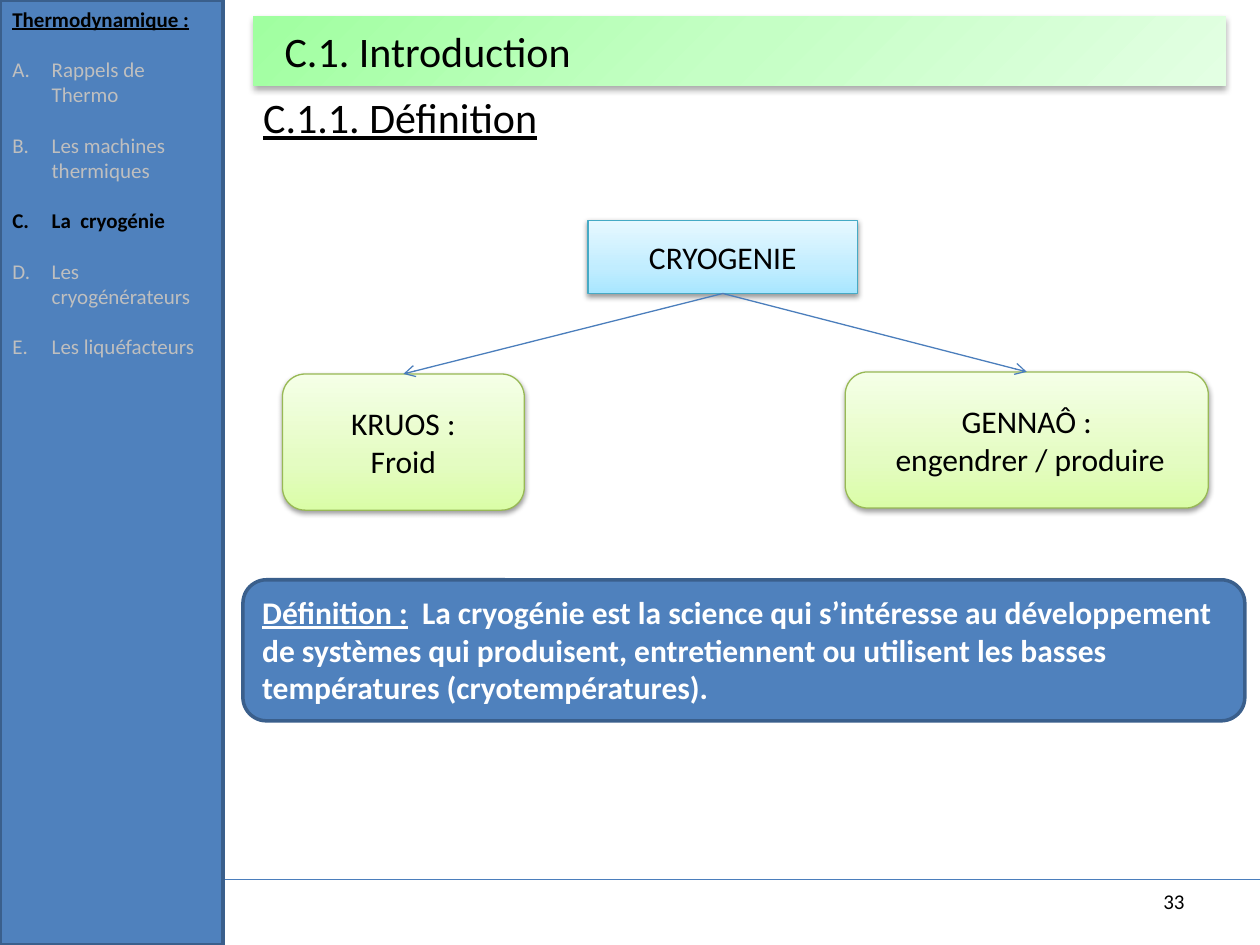
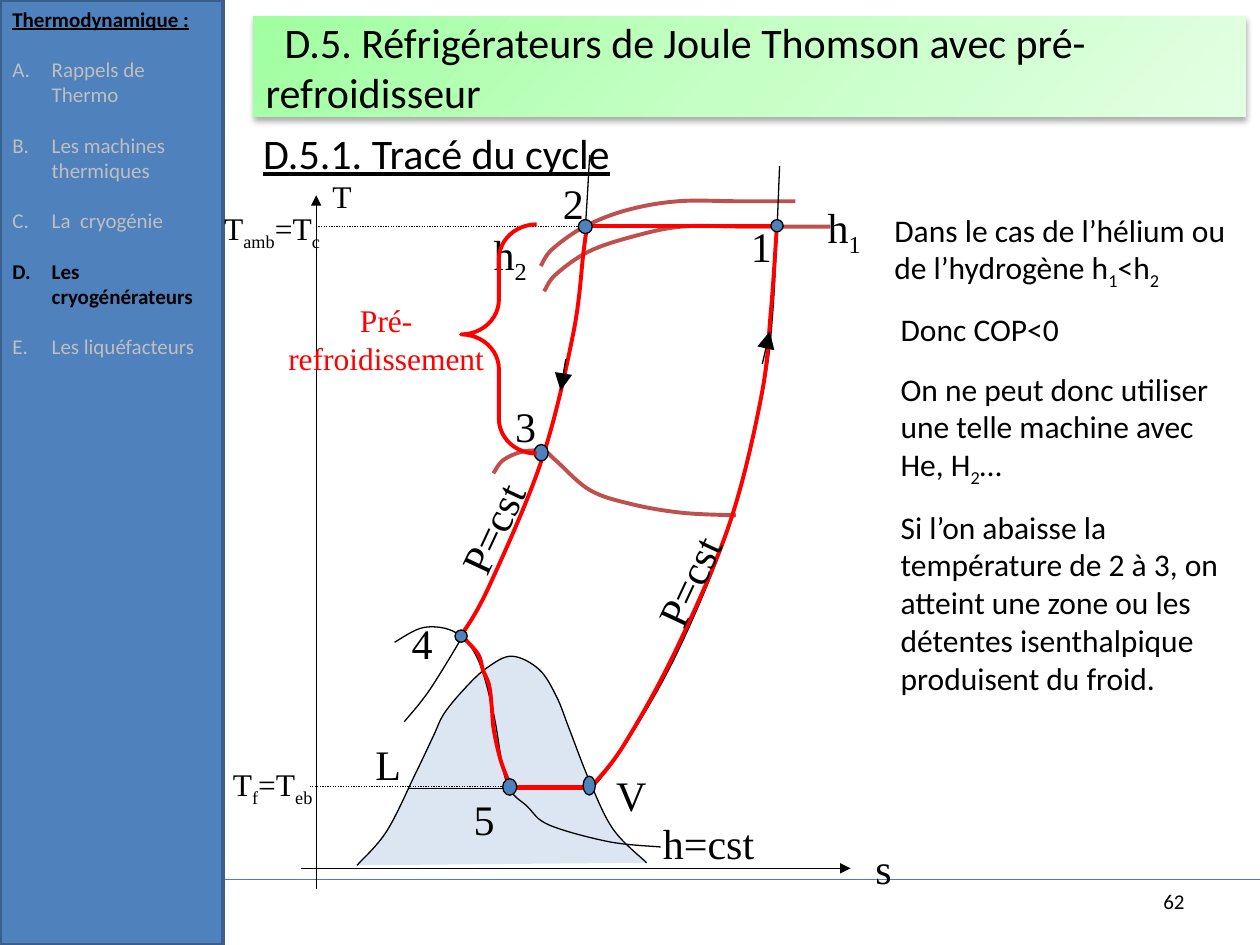
"""Build two thermodynamics course slides: cryogenics definition and a Joule Thomson cycle."""
from typing import Any, NamedTuple, Optional

import lxml.etree
import pptx
import pptx.dml.color
import pptx.enum.dml
import pptx.enum.shapes
import pptx.enum.text
import pptx.oxml.ns
import pptx.util

RGB = pptx.dml.color.RGBColor
BLACK = RGB(0x00, 0x00, 0x00)
WHITE = RGB(0xFF, 0xFF, 0xFF)
RED = RGB(0xFF, 0x00, 0x00)
BROWN = RGB(0xC0, 0x50, 0x4D)
BLUE = RGB(0x4F, 0x81, 0xBD)
EDGE = RGB(0x3A, 0x5F, 0x8C)
RULE = RGB(0x4B, 0x7E, 0xBC)
GREY = RGB(0xBF, 0xBF, 0xBF)
DOME = RGB(0xDC, 0xE6, 0xF2)
CYAN_EDGE = RGB(0x46, 0xAA, 0xC5)
LIME_EDGE = RGB(0x98, 0xB9, 0x55)
BAND_STOPS = {0: "A0FFA0", 50: "C5FFC5", 100: "E3FFE3"}
CYAN_STOPS = {0: "A7E6FF", 35: "C1EDFF", 100: "E7F8FF"}
LIME_STOPS = {0: "DAFDA7", 35: "E4FCC2", 100: "F5FFE7"}

SHAPE = pptx.enum.shapes.MSO_SHAPE
ALIGN = pptx.enum.text.PP_ALIGN
MIDDLE = pptx.enum.text.MSO_ANCHOR.MIDDLE
TOP = pptx.enum.text.MSO_ANCHOR.TOP
SERIF = "Times New Roman"
CHAPTERS = ["Rappels de Thermo", "Les machines thermiques", "La  cryogénie",
            "Les cryogénérateurs", "Les liquéfacteurs"]

Point = tuple[float, float]


class Box(NamedTuple):
    """Left, top, width and height in points."""
    x: float
    y: float
    w: float
    h: float


class Page(NamedTuple):
    """What changes in the frame shared by the slides."""
    title: str
    band: Box
    subtitle: str
    subtitle_top: float
    chapter: str
    number: str


class Label(NamedTuple):
    """A text box; odd parts between bars are subscripts."""
    text: str
    box: Box
    size: float = 24
    font: str = SERIF
    rotation: float = 0


class Segment(NamedTuple):
    """A straight line."""
    start: Point
    end: Point
    color: RGB = BLACK
    width: float = 0.75
    head: str = ""
    head_size: str = "med"
    dotted: bool = False


class Curve(NamedTuple):
    """A smooth outline through points."""
    points: list[Point]
    color: RGB = BLACK
    width: float = 0.75
    fill: Optional[RGB] = None


def pts(*values: float) -> list[int]:
    """Convert points to lengths."""
    return [pptx.util.Pt(v) for v in values]


def apply(target: Any, values: dict[str, Any]) -> None:
    """Set every attribute in values on target."""
    for name, value in values.items():
        setattr(target, name, value)


def sub(parent: Any, tag: str, **attrs: str) -> Any:
    """Append a DrawingML element."""
    e = lxml.etree.SubElement(parent, pptx.oxml.ns.qn(tag))
    for name, value in attrs.items():
        e.set(name, value)
    return e


def style(font: Any, color: RGB = BLACK, size: float = 18, name: str = "Calibri", **values: Any) -> None:
    """Format a font."""
    apply(font, {"size": pptx.util.Pt(size), "name": name, **values})
    font.color.rgb = color


def write(p: Any, text: str, **values: Any) -> None:
    """Add text whose odd parts between bars are subscripts."""
    for i, part in enumerate(text.split("|")):
        if part:
            r = p.add_run()
            r.text = part
            style(r.font, **values)
            if i % 2:
                r.font._element.set("baseline", "-25000")


def indent(p: Any, left: float, first: float) -> Any:
    """Indent a paragraph and return its properties."""
    ppr = p._p.get_or_add_pPr()
    ppr.set("marL", str(pptx.util.Pt(left)))
    ppr.set("indent", str(pptx.util.Pt(first)))
    return ppr


def add_text(s: Any, text: str, box: Box, anchor: Any = TOP, align: Any = ALIGN.LEFT, **values: Any) -> Any:
    """Add a text box and return it."""
    sp = s.shapes.add_textbox(*pts(*box))
    apply(sp.text_frame, {"word_wrap": True, "vertical_anchor": anchor})
    p = sp.text_frame.paragraphs[0]
    p.alignment = align
    for i, line in enumerate(text.split("\n")):
        if i:
            p.add_line_break()
        write(p, line, **values)
    return sp


def outline(sp: Any, color: Optional[RGB], width: float) -> None:
    """Set the line of a shape and drop its shadow."""
    sp.shadow.inherit = False
    if color is None:
        sp.line.fill.background()
    else:
        sp.line.color.rgb = color
        sp.line.width = pptx.util.Pt(width)


def add_solid(s: Any, kind: Any, box: Box, fill: RGB, edge: RGB, width: float) -> Any:
    """Add a flat preset shape."""
    sp = s.shapes.add_shape(kind, *pts(*box))
    sp.fill.solid()
    sp.fill.fore_color.rgb = fill
    outline(sp, edge, width)
    return sp


def add_gradient(s: Any, kind: Any, box: Box, stops: dict[int, str], angle: float,
                 edge: Optional[RGB], shadow: tuple[float, float, int]) -> Any:
    """Add a gradient shape with a soft shadow below."""
    sp = s.shapes.add_shape(kind, *pts(*box))
    sp.fill.gradient()
    sp.fill.gradient_angle = angle
    spr = sp._element.spPr
    gs_list = spr.find(".//" + pptx.oxml.ns.qn("a:gsLst"))
    for gs in list(gs_list):
        gs_list.remove(gs)
    for pos, color in stops.items():
        sub(sub(gs_list, "a:gs", pos=str(pos * 1000)), "a:srgbClr", val=color)
    outline(sp, edge, 0.75)
    blur, dist, alpha = shadow
    e = sub(spr.find(pptx.oxml.ns.qn("a:effectLst")), "a:outerShdw", blurRad=str(pptx.util.Pt(blur)),
            dist=str(pptx.util.Pt(dist)), dir="5400000", rotWithShape="0")
    sub(sub(e, "a:srgbClr", val="000000"), "a:alpha", val=str(alpha * 1000))
    sp.text_frame.vertical_anchor = MIDDLE
    return sp


def add_segment(s: Any, seg: Segment) -> Any:
    """Draw a straight line and return it."""
    c = s.shapes.add_connector(pptx.enum.shapes.MSO_CONNECTOR.STRAIGHT, *pts(*seg.start, *seg.end))
    c.line.color.rgb = seg.color
    c.line.width = pptx.util.Pt(seg.width)
    if seg.dotted:
        c.line.dash_style = pptx.enum.dml.MSO_LINE.ROUND_DOT
    if seg.head:
        sub(c.line._get_or_add_ln(), "a:tailEnd", type=seg.head, w=seg.head_size, len=seg.head_size)
    sub(c._element.spPr, "a:effectLst")
    return c


def round_corners(sp: Any) -> None:
    """Turn the straight pieces of a freeform into Catmull-Rom cubic curves."""
    pieces = sp._element.spPr.find(".//" + pptx.oxml.ns.qn("a:path"))
    knots = [(int(e.get("x")), int(e.get("y"))) for e in pieces.iter(pptx.oxml.ns.qn("a:pt"))]
    for line in list(pieces)[1:]:
        pieces.remove(line)
    padded = [knots[0], *knots, knots[-1]]
    for a, b, c, d in zip(padded, padded[1:], padded[2:], padded[3:]):
        enter = [b[i] + (c[i] - a[i]) / 6 for i in (0, 1)]
        leave = [c[i] - (d[i] - b[i]) / 6 for i in (0, 1)]
        bezier = sub(pieces, "a:cubicBezTo")
        for x, y in (enter, leave, c):
            sub(bezier, "a:pt", x=str(round(x)), y=str(round(y)))


def add_curve(s: Any, curve: Curve) -> None:
    """Draw a smooth freeform."""
    first, *rest = [pts(*pt) for pt in curve.points]
    fb = s.shapes.build_freeform(*first, scale=1.0)
    fb.add_line_segments(rest, close=False)
    sp = fb.convert_to_shape()
    round_corners(sp)
    if curve.fill is None:
        sp.fill.background()
    else:
        sp.fill.solid()
        sp.fill.fore_color.rgb = curve.fill
    outline(sp, curve.color, curve.width)


def add_page(prs: Any, page: Page) -> Any:
    """Add a slide with its sidebar, title band and number."""
    s = prs.slides.add_slide(prs.slide_layouts[6])
    add_solid(s, SHAPE.RECTANGLE, Box(0, 0, 127.5, 540), BLUE, EDGE, 2)
    band = add_gradient(s, SHAPE.RECTANGLE, page.band, BAND_STOPS, 315, None, (3.5, 2.2, 32))
    p = band.text_frame.paragraphs[0]
    p.alignment = ALIGN.LEFT
    indent(p, 0, 10.8)
    write(p, page.title, size=24)
    add_text(s, page.number, Box(516.2, 500.4, 167.8, 28.8), MIDDLE, ALIGN.RIGHT, size=12)
    menu = add_text(s, "Thermodynamique :", Box(0, 0, 127.5, 211), size=12, bold=True, underline=True)
    for chapter in CHAPTERS:
        p = menu.text_frame.add_paragraph()
        p.space_before = pptx.util.Pt(14.4)
        sub(indent(p, 22.5, -22.5), "a:buAutoNum", type="alphaUcPeriod")
        current = chapter == page.chapter
        write(p, chapter, size=12, bold=current, color=BLACK if current else GREY)
    add_text(s, page.subtitle, Box(143.3, page.subtitle_top, 540, 36), size=24, underline=True)
    return s


def build_definition(prs: Any) -> Any:
    """Build the etymology tree and the definition."""
    s = add_page(prs, Page("C.1. Introduction", Box(144.7, 9.2, 555.8, 39.6), "C.1.1. Définition", 49,
                           CHAPTERS[2], "33"))
    root = Box(336, 125.9, 154.1, 41.8)
    rounded = SHAPE.FLOWCHART_ALTERNATE_PROCESS
    leaves = [(Box(161.4, 213.7, 138.2, 77.8), ["KRUOS :", "Froid"]),
              (Box(483, 212.5, 207.5, 77.8), ["GENNAÔ :", " engendrer / produire"])]
    nodes = [(root, ["CRYOGENIE"], SHAPE.FLOWCHART_PROCESS, CYAN_STOPS, CYAN_EDGE)]
    nodes += [(box, lines, rounded, LIME_STOPS, LIME_EDGE) for box, lines in leaves]
    for box, lines, kind, stops, edge in nodes:
        tf = add_gradient(s, kind, box, stops, 90, edge, (3.1, 1.6, 38)).text_frame
        tf.word_wrap = False
        for i, line in enumerate(lines):
            p = tf.add_paragraph() if i else tf.paragraphs[0]
            p.alignment = ALIGN.CENTER
            write(p, line)
    sp = add_solid(s, SHAPE.ROUNDED_RECTANGLE, Box(138.8, 331.3, 572.5, 80.6), BLUE, EDGE, 2)
    apply(sp.text_frame, {"word_wrap": True, "vertical_anchor": TOP})
    p = sp.text_frame.paragraphs[0]
    p.alignment = ALIGN.LEFT
    write(p, "Définition :", color=WHITE, bold=True, underline=True)
    write(p, "  La cryogénie est la science qui s’intéresse au développement de systèmes qui produisent, "
             "entretiennent ou utilisent les basses températures (cryotempératures).", color=WHITE, bold=True)
    for box, _ in leaves:
        add_segment(s, Segment((root.x + root.w / 2, root.y + root.h), (box.x + box.w / 2, box.y), RULE, head="arrow"))
    return s


def build_cycle(prs: Any) -> None:
    """Build the T-s diagram and its comments."""
    s = add_page(prs, Page("D.5. Réfrigérateurs de Joule Thomson avec pré-refroidisseur",
                           Box(144.7, 9.2, 566.9, 57.6), "D.5.1. Tracé du cycle", 69.3, CHAPTERS[3], "62"))
    curves = [
        Curve([(204, 494.5), (221, 475), (237.5, 442), (247.5, 421), (254, 407.5), (266.5, 392.5), (278.5, 381.5),
               (292.5, 375), (308, 382.5), (318, 398), (325.5, 417), (337, 446.5), (350.5, 474), (369.5, 493)],
              fill=DOME),
        Curve([(309, 152), (315.5, 142.5), (334, 129.5), (358.5, 120), (387.5, 115), (422.5, 115), (454.5, 115)],
              BROWN, 2.25),
        Curve([(311, 166.5), (317.5, 157), (336, 144), (360.5, 135.5), (389.5, 129.5), (425, 129.5), (474.5, 129.5)],
              BROWN, 2.25),
        Curve([(282, 270.5), (287.5, 263), (299, 258), (311, 258), (317.5, 263), (337, 280), (360.5, 288),
               (389.5, 293), (420.5, 294.5)], BROWN, 2.25),
        Curve([(339, 450), (357, 426), (387.5, 372), (417, 300), (435, 228), (441.5, 180), (445.5, 95)]),
        Curve([(225.5, 367), (242.5, 358.5), (260.5, 361.5), (273, 376.5), (282, 407.5), (289.5, 447), (301.5, 461),
               (314, 471.5), (348, 481), (377.5, 484)]),
        Curve([(231, 412.5), (249, 389), (279.5, 335), (309.5, 263), (327.5, 191), (333.5, 142.5), (337, 88.5)]),
        Curve([(262, 361.5), (263.5, 363), (279.5, 335), (309.5, 263), (327.5, 191), (333.5, 143.5), (335.5, 129)],
              RED, 2.25),
        Curve([(339, 448.5), (357, 425), (386.5, 371), (417, 299), (435, 227), (440.5, 178.5), (444, 129)], RED, 2.25),
        Curve([(262, 361.5), (273, 373.5), (276, 383), (279.5, 391.5), (281, 404), (282, 416), (285, 430.5),
               (288, 440), (291.5, 448.5)], RED, 2.25)]
    segments = [
        Segment((322, 449.4), (177, 449.4), dotted=True), Segment((448, 129.4), (180.7, 129.4), dotted=True),
        Segment((172, 496.2), (486, 496.2), head="triangle"), Segment((180.7, 508.3), (180.7, 111.6), head="triangle"),
        Segment((337.5, 450.7), (233.3, 450.7)),
        Segment((323.3, 205.2), (320.4, 223.2), head="triangle", head_size="lg"),
        Segment((435.6, 208), (439.9, 189.4), head="triangle", head_size="lg"),
        Segment((442.8, 129), (334, 129), RED, 2.25), Segment((290.2, 450), (339, 450), RED, 3)]
    labels = [
        Label("h|2", Box(275, 126.8, 39.5, 36)), Label("h|1", Box(465.8, 111.4, 39.5, 36)),
        Label("T|f|=T|eb", Box(126, 433.4, 86.5, 29), 18), Label("T|amb|=T|c", Box(121, 116, 126, 29), 18),
        Label("T", Box(182.9, 97.8, 34, 29), 18), Label("s", Box(493.2, 478, 36, 36)),
        Label("P=cst", Box(354.2, 306, 85.7, 36), rotation=294.9),
        Label("P=cst", Box(241.9, 275.8, 85.7, 36), rotation=294.9), Label("h=cst", Box(371.7, 463.6, 85.7, 36)),
        Label("1", Box(422, 122.5, 29, 36)), Label("2", Box(314.5, 98, 29, 36)), Label("3", Box(287.3, 225.4, 42, 36)),
        Label("4", Box(228.2, 349.3, 26, 36)), Label("5", Box(263.5, 450, 29.5, 36)),
        Label("L", Box(207.4, 418.4, 29.5, 36)), Label("V", Box(345, 436.4, 34, 36)),
        Label("Dans le cas de l’hélium ou de l’hydrogène h|1|<h|2", Box(504, 116.8, 207.4, 51), 18, "Calibri"),
        Label("Donc COP<0", Box(507.6, 173.5, 199, 29), 18, "Calibri"),
        Label("On ne peut donc utiliser une telle machine avec He, H|2|…", Box(507.6, 207.7, 200, 73), 18, "Calibri"),
        Label("Si l’on abaisse la température de 2 à 3, on atteint une zone ou les détentes isenthalpique "
              "produisent du froid.", Box(507.6, 286.5, 217.4, 117), 18, "Calibri")]
    states = [Box(305.3, 254, 8, 9.4), Box(260, 360, 7, 7), Box(287.3, 445, 8, 9.4), Box(333.2, 443.5, 7, 10.8),
              Box(440.5, 125.5, 7, 7), Box(330.5, 125.5, 8, 8)]
    for curve in curves:
        add_curve(s, curve)
    for segment in segments:
        add_segment(s, segment)
    for label in labels:
        sp = add_text(s, label.text, label.box, size=label.size, name=label.font)
        sp.rotation = label.rotation
    for box in states:
        add_solid(s, SHAPE.OVAL, box, BLUE, BLACK, 0.75)
    brace = s.shapes.add_shape(SHAPE.LEFT_BRACE, *pts(263.5, 128.2, 43.2, 131))
    brace.adjustments[0], brace.adjustments[1] = 0.46, 0.48
    brace.fill.background()
    outline(brace, RED, 2.25)
    add_text(s, "Pré-\nrefroidissement", Box(150.5, 168.3, 140.4, 51), align=ALIGN.CENTER, color=RED, name=SERIF)


def main() -> None:
    """Build and save the slides, with the footer rule on the master."""
    prs = pptx.Presentation()
    prs.slide_width, prs.slide_height = pts(720, 540)
    s = build_definition(prs)
    rule = add_segment(s, Segment((0, 502.5), (720, 502.5), RULE))
    prs.slide_master.shapes._spTree.append(rule._element)
    build_cycle(prs)
    prs.save("out.pptx")


if __name__ == "__main__":
    main()
